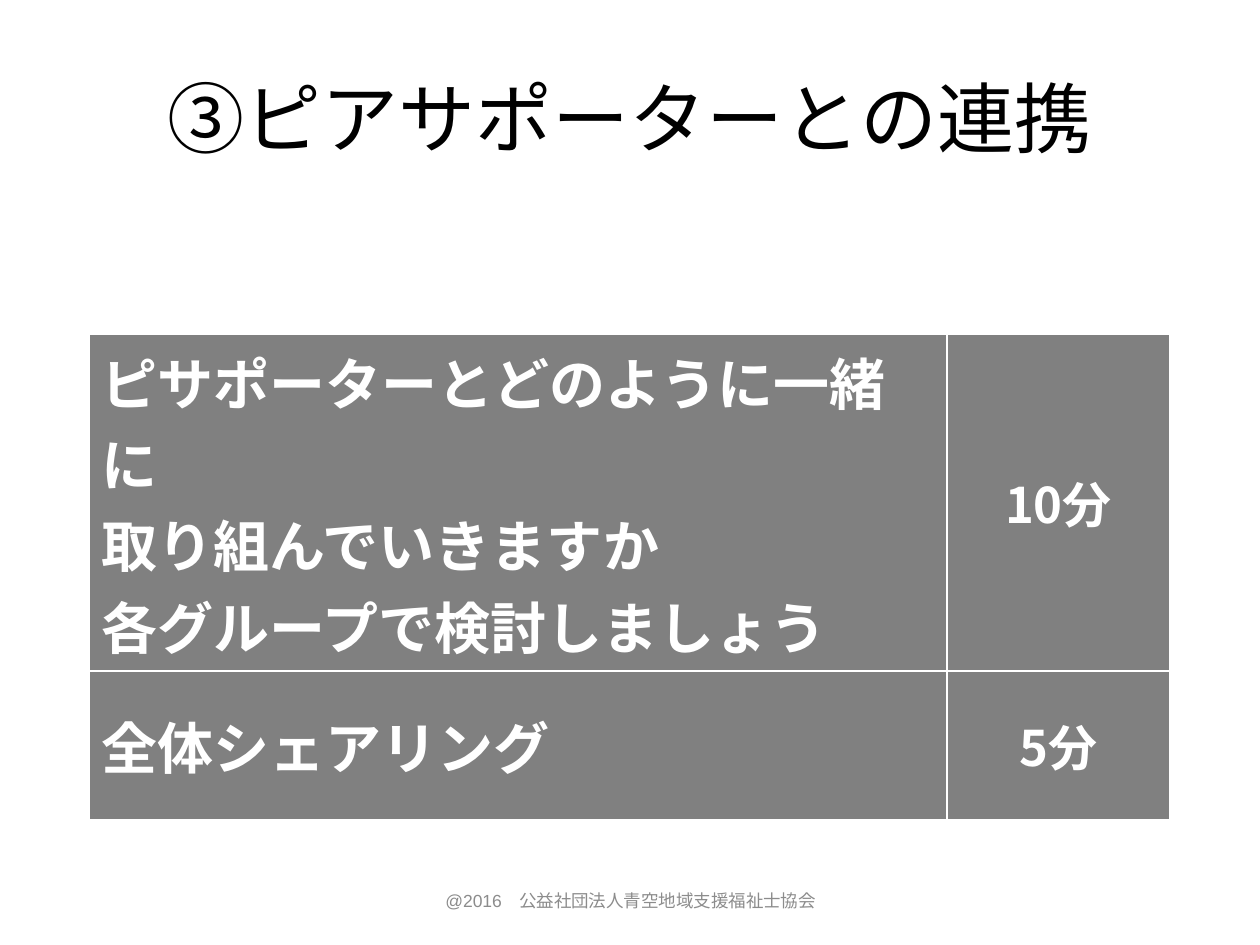
"""Build the peer supporter collaboration slide with its agenda table."""
from dataclasses import dataclass

from lxml import etree
from pptx import Presentation
from pptx.dml.color import RGBColor
from pptx.enum.lang import MSO_LANGUAGE_ID
from pptx.enum.text import MSO_ANCHOR, PP_ALIGN
from pptx.oxml.ns import qn
from pptx.slide import Slide
from pptx.table import _Cell
from pptx.text.text import TextFrame
from pptx.util import Emu, Pt

LEFT, CENTER = PP_ALIGN.LEFT, PP_ALIGN.CENTER
MIDDLE = MSO_ANCHOR.MIDDLE
JAPANESE = MSO_LANGUAGE_ID.JAPANESE
PIXEL = 914400 // 126


@dataclass(frozen=True)
class TextStyle:
    font: str
    size: int
    color: str
    bold: bool = False
    align: PP_ALIGN = CENTER


@dataclass(frozen=True)
class Theme:
    title: TextStyle = TextStyle("Calibri", 44, "000000")
    topic: TextStyle = TextStyle("Noto Sans CJK JP", 32, "FFFFFF", True, LEFT)
    duration: TextStyle = TextStyle("Noto Sans CJK JP", 28, "FFFFFF", True)
    footer: TextStyle = TextStyle("Arial", 10, "8C8C8C")
    cell_fill: str = "808080"
    border: str = "FFFFFF"
    border_width: int = 1


@dataclass(frozen=True)
class Area:
    left: int
    top: int
    width: int
    height: int

    def emu(self) -> list[Emu]:
        """Return the area as slide lengths."""
        return [px(value) for value in (self.left, self.top, self.width, self.height)]


@dataclass(frozen=True)
class AgendaItem:
    topic: str
    duration: str
    height: int


THEME = Theme()
TITLE_AREA = Area(63, 38, 1134, 157)
FOOTER_AREA = Area(431, 876, 399, 50)
COLUMN_WIDTHS = (858, 223)
AGENDA = (
    AgendaItem(
        "ピサポーターとどのように一緒に\n取り組んでいきますか\n各グループで検討しましょう",
        "10分",
        337,
    ),
    AgendaItem("全体シェアリング", "5分", 149),
)
AGENDA_AREA = Area(89, 334, sum(COLUMN_WIDTHS), sum(item.height for item in AGENDA))


def px(value: int) -> Emu:
    """Convert pixels to EMU."""
    return Emu(value * PIXEL)


def write_text(frame: TextFrame, text: str, style: TextStyle) -> None:
    """Fill a text frame and style each paragraph."""
    frame.text = text
    frame.word_wrap = True
    for para in frame.paragraphs:
        para.alignment = style.align
        para.font.name = style.font
        para.font.size = Pt(style.size)
        para.font.bold = style.bold
        para.font.color.rgb = RGBColor.from_string(style.color)
        para.font.language_id = JAPANESE


def add_text(page: Slide, area: Area, text: str, style: TextStyle) -> None:
    """Add a vertically centred text box."""
    box = page.shapes.add_textbox(*area.emu())
    write_text(box.text_frame, text, style)
    box.text_frame.vertical_anchor = MIDDLE


def add_borders(cell: _Cell) -> None:
    """Draw a solid line on all four sides of a cell."""
    properties = cell._tc.get_or_add_tcPr()
    for position, side in enumerate(("lnL", "lnR", "lnT", "lnB")):
        line = etree.Element(qn(f"a:{side}"), w=str(Pt(THEME.border_width)))
        fill = etree.SubElement(line, qn("a:solidFill"))
        etree.SubElement(fill, qn("a:srgbClr"), val=THEME.border)
        properties.insert(position, line)


def fill_cell(cell: _Cell, text: str, style: TextStyle) -> None:
    """Write and decorate one agenda cell."""
    write_text(cell.text_frame, text, style)
    cell.vertical_anchor = MIDDLE
    cell.fill.solid()
    cell.fill.fore_color.rgb = RGBColor.from_string(THEME.cell_fill)
    add_borders(cell)


def add_agenda(page: Slide) -> None:
    """Add the table of topics and durations."""
    frame = page.shapes.add_table(len(AGENDA), len(COLUMN_WIDTHS), *AGENDA_AREA.emu())
    table = frame.table
    table.first_row = False
    table.horz_banding = False
    for column, width in zip(table.columns, COLUMN_WIDTHS):
        column.width = px(width)
    for row, item in zip(table.rows, AGENDA):
        row.height = px(item.height)
        fill_cell(row.cells[0], item.topic, THEME.topic)
        fill_cell(row.cells[1], item.duration, THEME.duration)


def main() -> None:
    """Build and save the deck."""
    deck = Presentation()
    deck.slide_width, deck.slide_height = px(1260), px(945)
    page = deck.slides.add_slide(deck.slide_layouts[6])
    add_text(page, TITLE_AREA, "③ピアサポーターとの連携", THEME.title)
    add_agenda(page)
    add_text(page, FOOTER_AREA, "@2016　公益社団法人青空地域支援福祉士協会", THEME.footer)
    deck.save("out.pptx")


if __name__ == "__main__":
    main()
